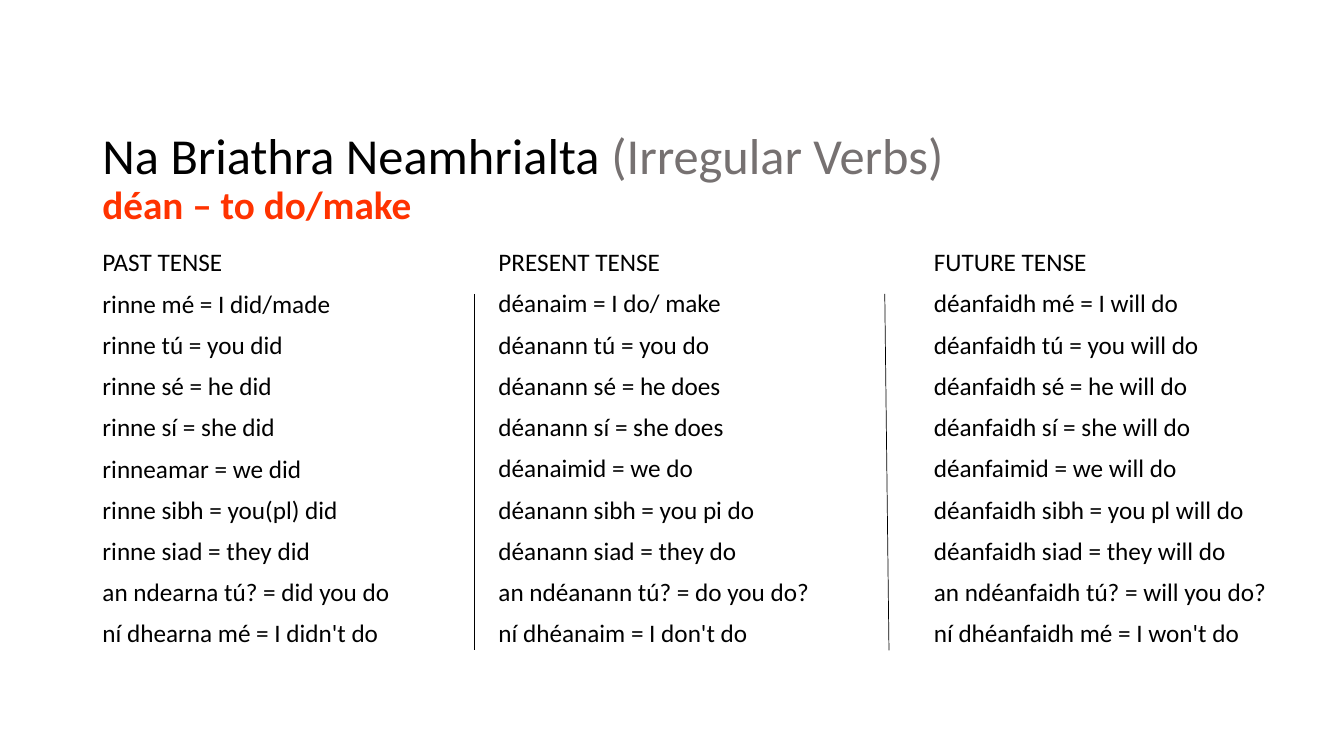
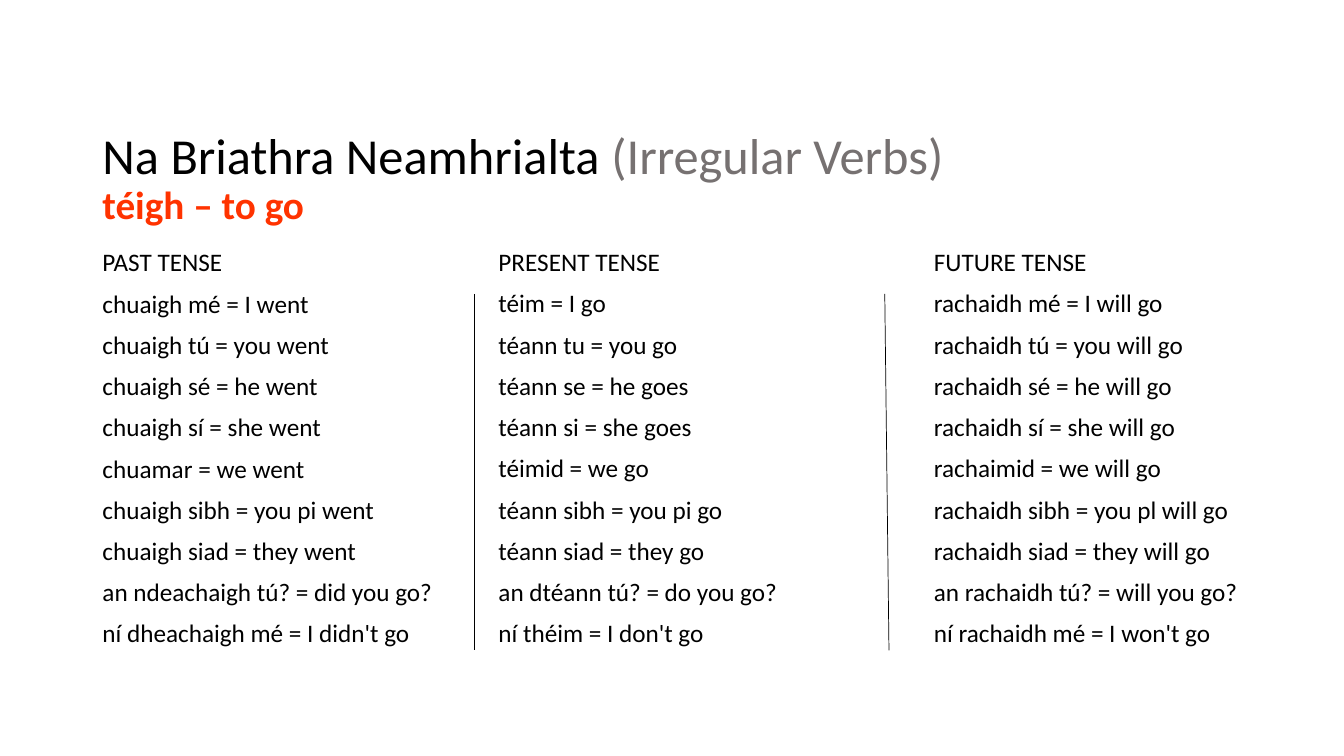
import copy

import pptx
import pptx.dml.color
import pptx.enum.shapes
import pptx.enum.text
import pptx.oxml
import pptx.oxml.ns
import pptx.util

Pt = pptx.util.Pt
FONT = "Calibri"
COLORS = {"text": "000000", "translation": "767171", "verb": "FF3300", "paper": "FFFFFF"}

HEADING = "Na Briathra Neamhrialta "
HEADING_ENGLISH = "(Irregular Verbs)"

VERBS = [
    ("déan – to do/make", {
        "PAST TENSE": [
            "rinne mé = I did/made",
            "rinne tú = you did",
            "rinne sé = he did",
            "rinne sí = she did",
            "rinneamar = we did",
            "rinne sibh = you(pl) did",
            "rinne siad = they did",
            "an ndearna tú? = did you do",
            "ní dhearna mé = I didn't do",
        ],
        "PRESENT TENSE": [
            "déanaim = I do/ make",
            "déanann tú = you do",
            "déanann sé = he does",
            "déanann sí = she does",
            "déanaimid = we do",
            "déanann sibh = you pi do",
            "déanann siad = they do",
            "an ndéanann tú? = do you do?",
            "ní dhéanaim = I don't do",
        ],
        "FUTURE TENSE": [
            "déanfaidh mé = I will do",
            "déanfaidh tú = you will do",
            "déanfaidh sé = he will do",
            "déanfaidh sí = she will do",
            "déanfaimid = we will do",
            "déanfaidh sibh = you pl will do",
            "déanfaidh siad = they will do",
            "an ndéanfaidh tú? = will you do?",
            "ní dhéanfaidh mé = I won't do",
        ],
    }),
    ("téigh – to go", {
        "PAST TENSE": [
            "chuaigh mé = I went",
            "chuaigh tú = you went",
            "chuaigh sé = he went",
            "chuaigh sí = she went",
            "chuamar = we went",
            "chuaigh sibh = you pi went",
            "chuaigh siad = they went",
            "an ndeachaigh tú? = did you go?",
            "ní dheachaigh mé = I didn't go",
        ],
        "PRESENT TENSE": [
            "téim = I go",
            "téann tu = you go",
            "téann se = he goes",
            "téann si = she goes",
            "téimid = we go",
            "téann sibh = you pi go",
            "téann siad = they go",
            "an dtéann tú? = do you go?",
            "ní théim = I don't go",
        ],
        "FUTURE TENSE": [
            "rachaidh mé = I will go",
            "rachaidh tú = you will go",
            "rachaidh sé = he will go",
            "rachaidh sí = she will go",
            "rachaimid = we will go",
            "rachaidh sibh = you pl will go",
            "rachaidh siad = they will go",
            "an rachaidh tú? = will you go?",
            "ní rachaidh mé = I won't go",
        ],
    }),
]

TITLE_BOX = (66, 90, 878, 85)
COLUMN_TOP, COLUMN_HEIGHT = 175, 300
COLUMNS = [(66, 257), (349, 296), (660, 257)]
DIVIDER_TOP, DIVIDER_BOTTOM = 210, 464.5
DIVIDERS = [(338.5, 338.5), (632, 635)]


def rgb(name):
    return pptx.dml.color.RGBColor.from_string(COLORS[name])


def place(shape, left, top, width, height):
    shape.left, shape.top, shape.width, shape.height = map(Pt, (left, top, width, height))


def write(paragraph, text, size=18, color="text", bold=False, before=0, break_after=False):
    paragraph.alignment = pptx.enum.text.PP_ALIGN.LEFT
    paragraph.line_spacing = 0.9
    paragraph.space_before = Pt(before)
    run = paragraph.add_run()
    run.text = text
    run.font.name = FONT
    run.font.size = Pt(size)
    run.font.bold = bold
    run.font.color.rgb = rgb(color)
    if break_after:
        paragraph.add_line_break()
        paragraph._p[-1].append(copy.deepcopy(run._r.get_or_add_rPr()))


def prepare(shape):
    frame = shape.text_frame
    frame.word_wrap = True
    frame.auto_size = pptx.enum.text.MSO_AUTO_SIZE.NONE
    frame.vertical_anchor = pptx.enum.text.MSO_ANCHOR.TOP
    return frame


def fill_title(title, verb):
    place(title, *TITLE_BOX)
    heading = prepare(title).paragraphs[0]
    write(heading, HEADING, size=36)
    write(heading, HEADING_ENGLISH, size=36, color="translation", break_after=True)
    write(heading, verb, size=28, color="verb", bold=True)


def fill_column(column, tense, forms):
    frame = prepare(column)
    for index, line in enumerate([tense, *forms]):
        paragraph = frame.add_paragraph() if index else frame.paragraphs[0]
        properties = paragraph._p.get_or_add_pPr()
        properties.set("marL", "0")
        properties.set("indent", "0")
        properties.append(pptx.oxml.parse_xml(f'<a:buNone {pptx.oxml.ns.nsdecls("a")}/>'))
        write(paragraph, line, before=10 if index else 0)


def add_divider(slide, start, end):
    divider = slide.shapes.add_connector(
        pptx.enum.shapes.MSO_CONNECTOR.STRAIGHT,
        Pt(start), Pt(DIVIDER_TOP), Pt(end), Pt(DIVIDER_BOTTOM))
    divider.line.color.rgb = rgb("text")
    divider.line.width = Pt(0.5)
    divider._element.spPr.append(
        pptx.oxml.parse_xml(f'<a:effectLst {pptx.oxml.ns.nsdecls("a")}/>'))


def add_verb_slide(deck, verb, tenses):
    slide = deck.slides.add_slide(deck.slide_layouts[1])
    fill_title(slide.shapes.title, verb)
    for start, end in DIVIDERS:
        add_divider(slide, start, end)
    for index, ((left, width), (tense, forms)) in enumerate(zip(COLUMNS, tenses.items())):
        box = (left, COLUMN_TOP, width, COLUMN_HEIGHT)
        if index:
            column = slide.shapes.add_textbox(*map(Pt, box))
        else:
            column = slide.placeholders[1]
            place(column, *box)
        fill_column(column, tense, forms)


def main():
    deck = pptx.Presentation()
    deck.slide_width, deck.slide_height = Pt(960), Pt(540)
    background = deck.slide_master.background.fill
    background.solid()
    background.fore_color.rgb = rgb("paper")
    for verb, tenses in VERBS:
        add_verb_slide(deck, verb, tenses)
    deck.save("out.pptx")


if __name__ == "__main__":
    main()
